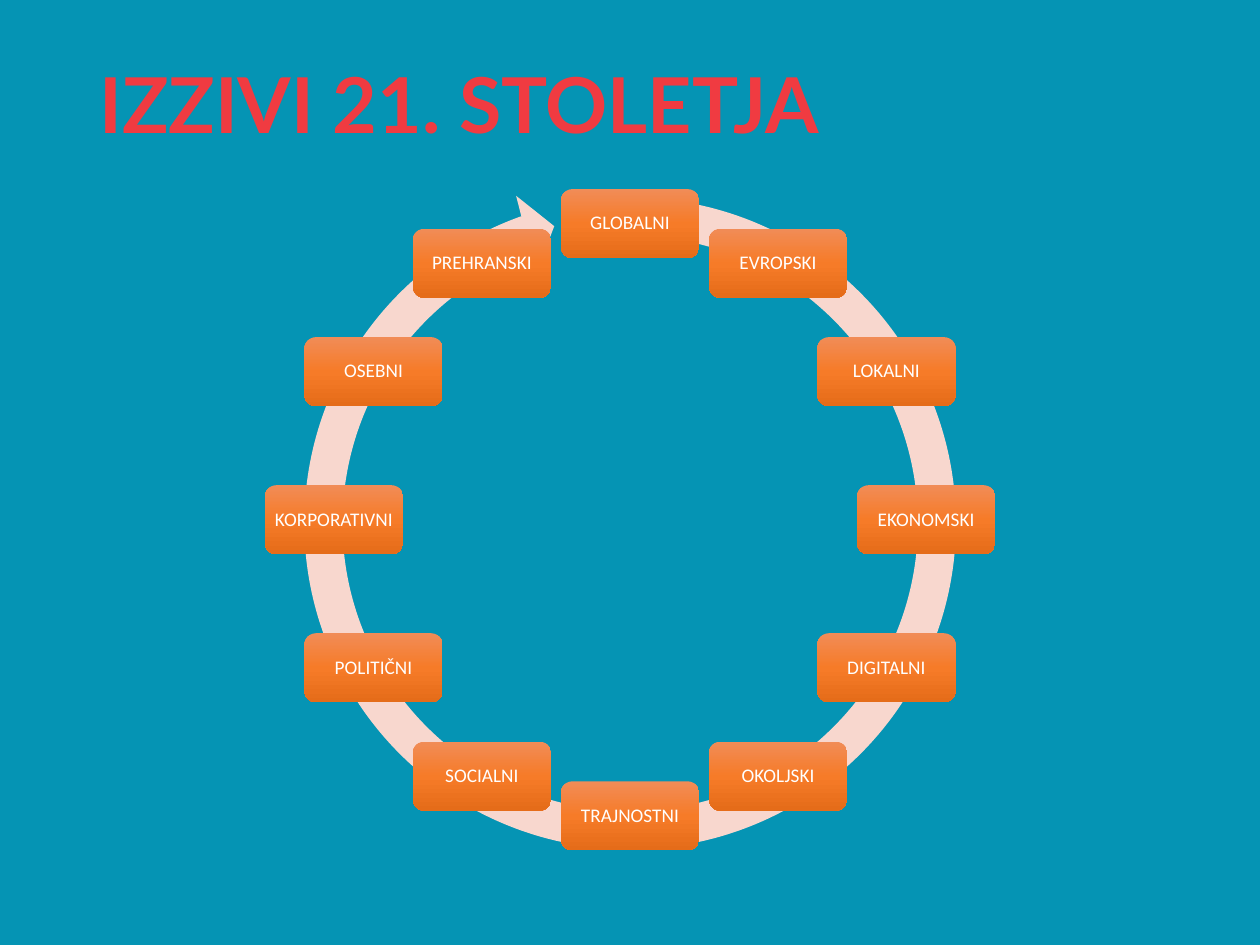
import copy
import math

from pptx import Presentation
from pptx.dml.color import RGBColor
from pptx.enum import shapes, text
from pptx.oxml.ns import qn
from pptx.util import Pt

CHALLENGES = ["GLOBALNI", "EVROPSKI", "LOKALNI", "EKONOMSKI", "DIGITALNI", "OKOLJSKI",
              "TRAJNOSTNI", "SOCIALNI", "POLITIČNI", "KORPORATIVNI", "OSEBNI", "PREHRANSKI"]
CENTER_X, CENTER_Y, RADIUS = 360, 297, 169.2
BOX_W, BOX_H = 79, 39.5
GRADIENT = [(0, "F18C57"), (0.5, "F67B28"), (1, "E56C19")]


def color(value):
    return RGBColor.from_string(value)


def add_run(p, value, font, size, hex_color, bold=False):
    r = p.add_run()
    r.text = value
    r.font.name = font
    r.font.size = Pt(size)
    r.font.bold = bold
    r.font.color.rgb = color(hex_color)


def fill_gradient(sp, stops):
    """Fill the shape from top to bottom with (position, colour) stops."""
    sp.fill.gradient()
    sp.fill.gradient_angle = 270
    stop_list = sp._element.spPr.find(".//" + qn("a:gsLst"))
    while len(stop_list) < len(stops):
        stop_list.append(copy.deepcopy(stop_list[0]))
    for stop, (position, hex_color) in zip(sp.fill.gradient_stops, stops):
        stop.position = position
        stop.color.rgb = color(hex_color)


def add_plain_shape(parent, kind, x, y, w, h):
    sp = parent.shapes.add_shape(kind, Pt(x), Pt(y), Pt(w), Pt(h))
    sp.shadow.inherit = False
    sp.line.fill.background()
    return sp


def set_title(s, value):
    title = s.shapes.title
    title.left, title.top, title.width, title.height = Pt(49.5), Pt(10), Pt(621), Pt(104.4)
    tf = title.text_frame
    tf.vertical_anchor = text.MSO_ANCHOR.MIDDLE
    p = tf.paragraphs[0]
    p.alignment = text.PP_ALIGN.LEFT
    p.line_spacing = 0.9
    add_run(p, value, "Lato", 44, "F03B41", bold=True)


def add_ring(parent):
    ring = add_plain_shape(parent, shapes.MSO_SHAPE.CIRCULAR_ARROW, 161.8, 100.8, 396.6, 396.6)
    ring.fill.solid()
    ring.fill.fore_color.rgb = color("F8D7CE")
    for i, value in enumerate([0.055, 3.307, 150.101, 166.717, 0.058]):
        ring.adjustments[i] = value


def add_challenge(parent, label, angle):
    """Centre a box on the circle, at an angle measured clockwise from the top."""
    x = CENTER_X + RADIUS * math.sin(angle) - BOX_W / 2
    y = CENTER_Y - RADIUS * math.cos(angle) - BOX_H / 2
    box = add_plain_shape(parent, shapes.MSO_SHAPE.ROUNDED_RECTANGLE, x, y, BOX_W, BOX_H)
    fill_gradient(box, GRADIENT)
    tf = box.text_frame
    tf.word_wrap = False
    tf.vertical_anchor = text.MSO_ANCHOR.MIDDLE
    tf.margin_left = tf.margin_right = tf.margin_top = tf.margin_bottom = Pt(5)
    p = tf.paragraphs[0]
    p.alignment = text.PP_ALIGN.CENTER
    p.line_spacing = 0.9
    add_run(p, label, "Calibri", 11, "FFFFFF")


def main():
    prs = Presentation()
    prs.slide_width, prs.slide_height = Pt(720), Pt(540)
    s = prs.slides.add_slide(prs.slide_layouts[5])
    s.background.fill.solid()
    s.background.fill.fore_color.rgb = color("0594B4")
    set_title(s, "IZZIVI 21. STOLETJA")
    cycle = s.shapes.add_group_shape()
    add_ring(cycle)
    for i, label in enumerate(CHALLENGES):
        add_challenge(cycle, label, 2 * math.pi * i / len(CHALLENGES))
    prs.save("out.pptx")


if __name__ == "__main__":
    main()
